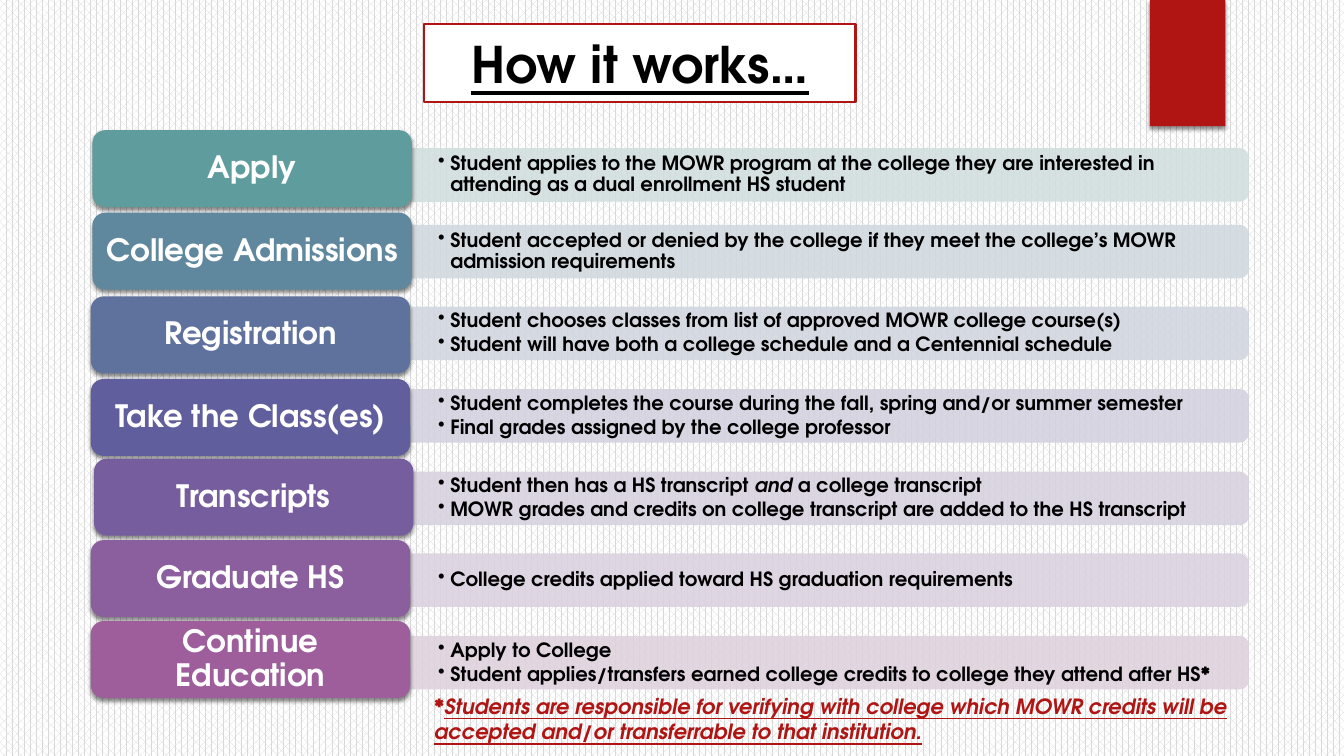
from dataclasses import dataclass

import pptx
import pptx.dml.color
import pptx.enum.dml
import pptx.enum.shapes
import pptx.enum.text
import pptx.oxml
import pptx.oxml.ns
import pptx.util
from pptx.util import Cm

SHAPE = pptx.enum.shapes.MSO_SHAPE
MIDDLE = pptx.enum.text.MSO_ANCHOR.MIDDLE
CENTER = pptx.enum.text.PP_ALIGN.CENTER


@dataclass(frozen=True)
class Theme:
    font: str = "TeX Gyre Adventor"
    red: str = "B01513"
    black: str = "000000"
    white: str = "FFFFFF"
    stripe: str = "D9D9D9"
    title_size: int = 36
    label_size: int = 22
    note_size: int = 15
    point_size: int = 14


@dataclass(frozen=True)
class Step:
    """One row; lengths in centimetres, underscores enclose italic words."""
    label: str
    label_left: float
    label_top: float
    band_middle: float
    label_color: str
    band_color: str
    points: tuple[str, ...]


THEME = Theme()
LABEL_WIDTH, LABEL_HEIGHT = 8.05, 1.94
BAND_LEFT, BAND_WIDTH, BAND_HEIGHT = 10.36, 21.11, 1.35
TEXT_WIDTH, TEXT_HEIGHT = 21.03, 1.22

STEPS = (
    Step("Apply", 2.33, 3.28, 4.41, "5F9C9D", "D2DEDF", (
        "Student applies to the MOWR program at the college they are interested in "
        "attending as a dual enrollment HS student",)),
    Step("College Admissions", 2.33, 5.36, 6.34, "5F879D", "D2DADF", (
        "Student accepted or denied by the college if they meet the college’s MOWR "
        "admission requirements",)),
    Step("Registration", 2.29, 7.47, 8.4, "5F729D", "D2D6DF", (
        "Student chooses classes from list of approved MOWR college course(s)",
        "Student will have both a college schedule and a Centennial schedule")),
    Step("Take the Class(es)", 2.29, 9.55, 10.48, "605E9D", "D3D2DF", (
        "Student completes the course during the fall, spring and/or summer semester",
        "Final grades assigned by the college professor")),
    Step("Transcripts", 2.37, 11.56, 12.56, "765E9E", "D7D2DF", (
        "Student then has a HS transcript _and_ a college transcript",
        "MOWR grades and credits on college transcript are added to the HS transcript")),
    Step("Graduate HS", 2.29, 13.61, 14.62, "8B5E9E", "DBD2DF", (
        "College credits applied toward HS graduation requirements",)),
    Step("Continue Education", 2.29, 15.65, 16.7, "9E5E9B", "DFD2DE", (
        "Apply to College",
        "Student applies/transfers earned college credits to college they attend after HS*")),
)


def rgb(color: str) -> pptx.dml.color.RGBColor:
    return pptx.dml.color.RGBColor.from_string(color)


def format_font(font, size: int, color: str, italic: bool = False,
                underline: bool = False) -> None:
    font.name = THEME.font
    font.size = pptx.util.Pt(size)
    font.color.rgb = rgb(color)
    font.bold = True
    font.italic = italic
    font.underline = underline


def set_insets(text_frame, horizontal: float, vertical: float) -> None:
    text_frame.margin_left = text_frame.margin_right = Cm(horizontal)
    text_frame.margin_top = text_frame.margin_bottom = Cm(vertical)


def add_block(slide, kind, left: float, top: float, width: float, height: float, color: str):
    shape = slide.shapes.add_shape(kind, Cm(left), Cm(top), Cm(width), Cm(height))
    shape.shadow.inherit = False
    shape.fill.solid()
    shape.fill.fore_color.rgb = rgb(color)
    shape.line.fill.background()
    return shape


def add_shadow(shape) -> None:
    effects = shape._element.spPr.find(pptx.oxml.ns.qn("a:effectLst"))
    effects.append(pptx.oxml.parse_xml(
        f'<a:outerShdw {pptx.oxml.ns.nsdecls("a")} blurRad="38100" dist="25400" '
        f'dir="5400000" rotWithShape="0"><a:srgbClr val="{THEME.black}">'
        '<a:alpha val="45000"/></a:srgbClr></a:outerShdw>'))


def add_bullet(paragraph) -> None:
    properties = paragraph._p.get_or_add_pPr()
    indent = Cm(0.31)
    properties.set("marL", str(indent))
    properties.set("indent", str(-indent))
    properties.append(pptx.oxml.parse_xml(
        f'<a:buChar {pptx.oxml.ns.nsdecls("a")} char="•"/>'))


def add_band(slide, step: Step) -> None:
    # The band is an upright tab turned a quarter so its round end faces right
    center = BAND_LEFT + BAND_WIDTH / 2
    band = add_block(slide, SHAPE.ROUND_2_SAME_RECTANGLE, center - BAND_HEIGHT / 2,
                     step.band_middle - BAND_WIDTH / 2, BAND_HEIGHT, BAND_WIDTH,
                     step.band_color)
    band.rotation = 90
    color = band._element.spPr.find(".//" + pptx.oxml.ns.qn("a:srgbClr"))
    color.append(pptx.oxml.parse_xml(
        f'<a:alpha {pptx.oxml.ns.nsdecls("a")} val="90000"/>'))


def add_points(slide, step: Step) -> None:
    box = slide.shapes.add_textbox(Cm(BAND_LEFT), Cm(step.band_middle - TEXT_HEIGHT / 2),
                                   Cm(TEXT_WIDTH), Cm(TEXT_HEIGHT))
    text_frame = box.text_frame
    text_frame.word_wrap = True
    text_frame.vertical_anchor = MIDDLE
    set_insets(text_frame, 0.68, 0.36)
    for number, point in enumerate(step.points):
        paragraph = text_frame.add_paragraph() if number else text_frame.paragraphs[0]
        add_bullet(paragraph)
        paragraph.line_spacing = 0.9
        paragraph.space_after = pptx.util.Pt(2)
        for index, words in enumerate(point.split("_")):
            run = paragraph.add_run()
            run.text = words
            format_font(run.font, THEME.point_size, THEME.black, italic=index % 2 == 1)


def add_label(slide, step: Step) -> None:
    label = add_block(slide, SHAPE.ROUNDED_RECTANGLE, step.label_left, step.label_top,
                      LABEL_WIDTH, LABEL_HEIGHT, step.label_color)
    add_shadow(label)
    text_frame = label.text_frame
    text_frame.text = step.label
    text_frame.word_wrap = True
    text_frame.vertical_anchor = MIDDLE
    set_insets(text_frame, 0.24, 0.12)
    paragraph = text_frame.paragraphs[0]
    paragraph.alignment = CENTER
    paragraph.line_spacing = 0.9
    format_font(paragraph.runs[0].font, THEME.label_size, THEME.white)


def format_title(title) -> None:
    title.left, title.top, title.width, title.height = Cm(10.69), Cm(0.61), Cm(10.87), Cm(1.96)
    title.fill.solid()
    title.fill.fore_color.rgb = rgb(THEME.white)
    title.line.color.rgb = rgb(THEME.red)
    title.line.width = pptx.util.Pt(1.5)
    text_frame = title.text_frame
    text_frame.text = "How it works…"
    text_frame.auto_size = pptx.enum.text.MSO_AUTO_SIZE.NONE
    text_frame.vertical_anchor = MIDDLE
    paragraph = text_frame.paragraphs[0]
    paragraph.alignment = CENTER
    format_font(paragraph.runs[0].font, THEME.title_size, THEME.black, underline=True)


def add_note(slide) -> None:
    box = slide.shapes.add_textbox(Cm(10.69), Cm(17.35), Cm(21.79), Cm(1.55))
    box.text_frame.word_wrap = True
    paragraph = box.text_frame.paragraphs[0]
    for words, underline in (
            ("*", False),
            ("Students are responsible for verifying with college which MOWR credits will be "
             "accepted and/or transferrable to that institution.", True)):
        run = paragraph.add_run()
        run.text = words
        format_font(run.font, THEME.note_size, THEME.red, italic=True, underline=underline)


def main() -> None:
    presentation = pptx.Presentation()
    presentation.slide_width, presentation.slide_height = Cm(33.87), Cm(19.05)
    slide = presentation.slides.add_slide(presentation.slide_layouts[5])

    # Background and corner ribbon
    background = slide.background.fill
    background.patterned()
    background.pattern = pptx.enum.dml.MSO_PATTERN.PERCENT_60
    background.fore_color.rgb = rgb(THEME.stripe)
    background.back_color.rgb = rgb(THEME.white)
    add_shadow(add_block(slide, SHAPE.RECTANGLE, 28.98, 0, 1.9, 3.18, THEME.red))

    # Title, steps and footnote
    format_title(slide.shapes.title)
    for step in STEPS:
        add_band(slide, step)
        add_points(slide, step)
        add_label(slide, step)
    add_note(slide)

    presentation.save("out.pptx")


if __name__ == "__main__":
    main()
